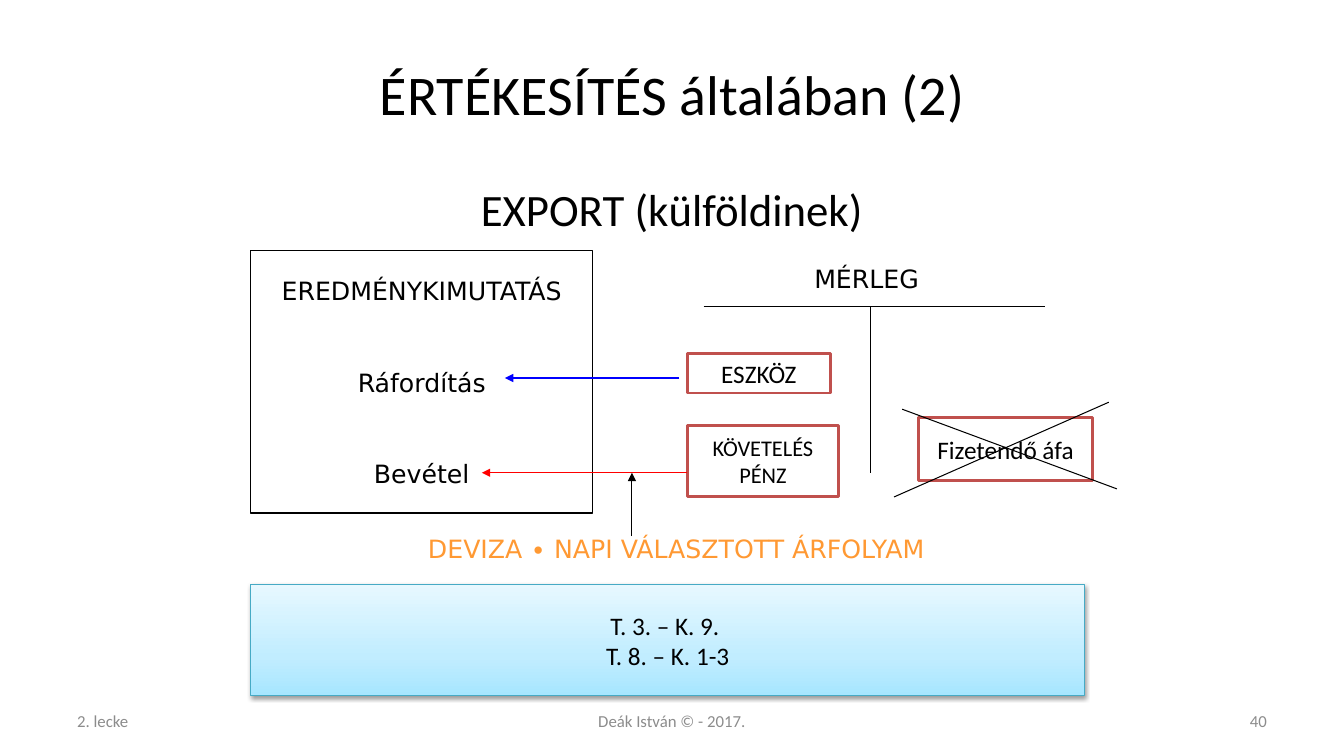
from copy import deepcopy
from dataclasses import dataclass

from lxml.etree import SubElement
from pptx import Presentation
from pptx.dml.color import RGBColor
from pptx.enum.shapes import MSO_CONNECTOR, MSO_SHAPE
from pptx.enum.text import MSO_ANCHOR, PP_ALIGN
from pptx.oxml.ns import qn
from pptx.util import Pt


@dataclass(frozen=True)
class Theme:
    body_font: str = "Calibri"
    label_font: str = "DejaVu Sans"
    black: str = "000000"
    white: str = "FFFFFF"
    footer_gray: str = "8C8C8C"
    account_border: str = "C0504D"
    revenue: str = "FF0000"
    expense: str = "0000FF"
    exchange_rate: str = "FF9933"
    entry_border: str = "46AAC5"
    entry_gradient: tuple = ((0, "A7E6FF"), (0.35, "C1EDFF"), (1, "E7F8FF"))
    title_size: int = 40
    subtitle_size: int = 32
    text_size: int = 18
    small_size: int = 16
    footer_size: int = 12
    thin: float = 0.75
    thick: float = 2


@dataclass(frozen=True)
class Box:
    left: float
    top: float
    width: float
    height: float

    def inside(self, left, top, width, height):
        """Return a box whose offsets are measured from this one."""
        return Box(self.left + left, self.top + top, width, height)

    def point(self, x, y):
        return self.left + x, self.top + y

    def lengths(self):
        return Pt(self.left), Pt(self.top), Pt(self.width), Pt(self.height)


THEME = Theme()


def rgb(color):
    return RGBColor.from_string(color)


def write(shape, lines, size=THEME.text_size, font=THEME.body_font, color=THEME.black,
          align=PP_ALIGN.CENTER, anchor=MSO_ANCHOR.MIDDLE, wrap=True, gap=0):
    """Fill a shape with one paragraph per line, gap points apart."""
    frame = shape.text_frame
    frame.word_wrap = wrap
    frame.vertical_anchor = anchor
    for index, line in enumerate(lines):
        paragraph = frame.add_paragraph() if index else frame.paragraphs[0]
        paragraph.text = line
        paragraph.alignment = align
        paragraph.space_before = Pt(gap if index else 0)
        paragraph.font.name = font
        paragraph.font.size = Pt(size)
        paragraph.font.color.rgb = rgb(color)


def add_text(slide, box, line, **style):
    write(slide.shapes.add_textbox(*box.lengths()), [line], **style)


def add_panel(slide, box, lines, border, width, fill=None, **style):
    shape = slide.shapes.add_shape(MSO_SHAPE.RECTANGLE, *box.lengths())
    shape.shadow.inherit = False
    if fill:
        shape.fill.solid()
        shape.fill.fore_color.rgb = rgb(fill)
    else:
        shape.fill.background()
    shape.line.color.rgb = rgb(border)
    shape.line.width = Pt(width)
    write(shape, lines, wrap=False, **style)
    return shape


def add_line(slide, start, end, color=THEME.black, arrow=False):
    line = slide.shapes.add_connector(
        MSO_CONNECTOR.STRAIGHT, *(Pt(value) for value in (*start, *end)))
    line.line.color.rgb = rgb(color)
    line.line.width = Pt(THEME.thin)
    if arrow:
        SubElement(line.line._get_or_add_ln(), qn("a:tailEnd"), type="triangle")
    SubElement(line._element.spPr, qn("a:effectLst"))


def add_headings(slide, box):
    add_text(slide, box.inside(0, 0, box.width, 90), "ÉRTÉKESÍTÉS általában (2)",
             size=THEME.title_size)
    add_text(slide, box.inside(0, 104.4, box.width, 356.4), "EXPORT (külföldinek)",
             size=THEME.subtitle_size, anchor=MSO_ANCHOR.TOP)


def add_income_statement(slide, box):
    add_panel(slide, box, ["EREDMÉNYKIMUTATÁS", "Ráfordítás", "Bevétel"],
              THEME.black, THEME.thin, font=THEME.label_font, gap=43.5)


def add_balance_sheet(slide, box):
    """Draw the T-account, its accounts and the crossed-out tax."""
    add_text(slide, box.inside(57, 0, 142, 28), "MÉRLEG",
             font=THEME.label_font, wrap=False)
    lines = [
        ((11.6, 33.9), (255.6, 33.9)),
        ((131.1, 33.9), (131.1, 152.7)),
        ((147.6, 170), (301, 102.3)),
        ((153.4, 107.3), (306.8, 164.2)),
    ]
    accounts = [
        (box.inside(0, 67.7, 102.2, 28), ["ESZKÖZ"], THEME.text_size),
        (box.inside(0, 118.8, 108, 51.2), ["KÖVETELÉS", "PÉNZ"], THEME.small_size),
        (box.inside(165, 113, 124.6, 45.4), ["Fizetendő áfa"], THEME.text_size),
    ]
    for account_box, names, size in accounts:
        add_panel(slide, account_box, names, THEME.account_border, THEME.thick,
                  fill=THEME.white, size=size)
    for start, end in lines:
        add_line(slide, box.point(*start), box.point(*end))


def add_flows(slide, box):
    """Draw the arrows to the income statement and the exchange rate note."""
    arrows = [
        ((124.6, 0), (0, 0), THEME.expense),
        ((130.3, 67.7), (-16.5, 67.7), THEME.revenue),
        ((90.7, 113), (90.7, 67.7), THEME.black),
    ]
    for start, end, color in arrows:
        add_line(slide, box.point(*start), box.point(*end), color, arrow=True)
    add_text(slide, box.inside(-67.7, 107.3, 380.2, 28.8),
             "DEVIZA ∙ NAPI VÁLASZTOTT ÁRFOLYAM", font=THEME.label_font,
             color=THEME.exchange_rate, anchor=MSO_ANCHOR.TOP)


def add_journal_entries(slide, box):
    panel = add_panel(slide, box, ["T. 3. – K. 9. ", "T. 8. – K. 1-3"],
                      THEME.entry_border, THEME.thin)
    panel.fill.gradient()
    panel.fill.gradient_angle = 90
    first = panel.fill.gradient_stops[0]._gs
    first.addnext(deepcopy(first))
    for stop, (position, color) in zip(panel.fill.gradient_stops, THEME.entry_gradient):
        stop.position = position
        stop.color.rgb = rgb(color)
    effects = panel._element.spPr.find(qn("a:effectLst"))
    shadow = SubElement(effects, qn("a:outerShdw"), blurRad=str(Pt(3.1)),
                        dist=str(Pt(1.6)), dir="5400000", rotWithShape="0")
    shade = SubElement(shadow, qn("a:srgbClr"), val=THEME.black)
    SubElement(shade, qn("a:alpha"), val="38000")


def add_footer(slide, box):
    side, middle = 224, 304
    parts = [
        (0, side, "2. lecke", PP_ALIGN.LEFT),
        ((box.width - middle) / 2, middle, "Deák István © - 2017.", PP_ALIGN.CENTER),
        (box.width - side, side, "40", PP_ALIGN.RIGHT),
    ]
    for left, width, line, align in parts:
        add_text(slide, box.inside(left, 0, width, box.height), line,
                 size=THEME.footer_size, color=THEME.footer_gray, align=align)


def main():
    presentation = Presentation()
    presentation.slide_width, presentation.slide_height = Pt(960), Pt(540)
    slide = presentation.slides.add_slide(presentation.slide_layouts[6])
    add_headings(slide, Box(48, 21.6, 864, 460.8))
    add_income_statement(slide, Box(179.3, 179.3, 244, 187.2))
    add_balance_sheet(slide, Box(491, 185, 307, 170))
    add_flows(slide, Box(360.7, 270, 312, 136))
    add_journal_entries(slide, Box(179.3, 417.6, 595.4, 79.2))
    add_footer(slide, Box(48, 500.4, 864, 28.8))
    presentation.save("out.pptx")


if __name__ == "__main__":
    main()
